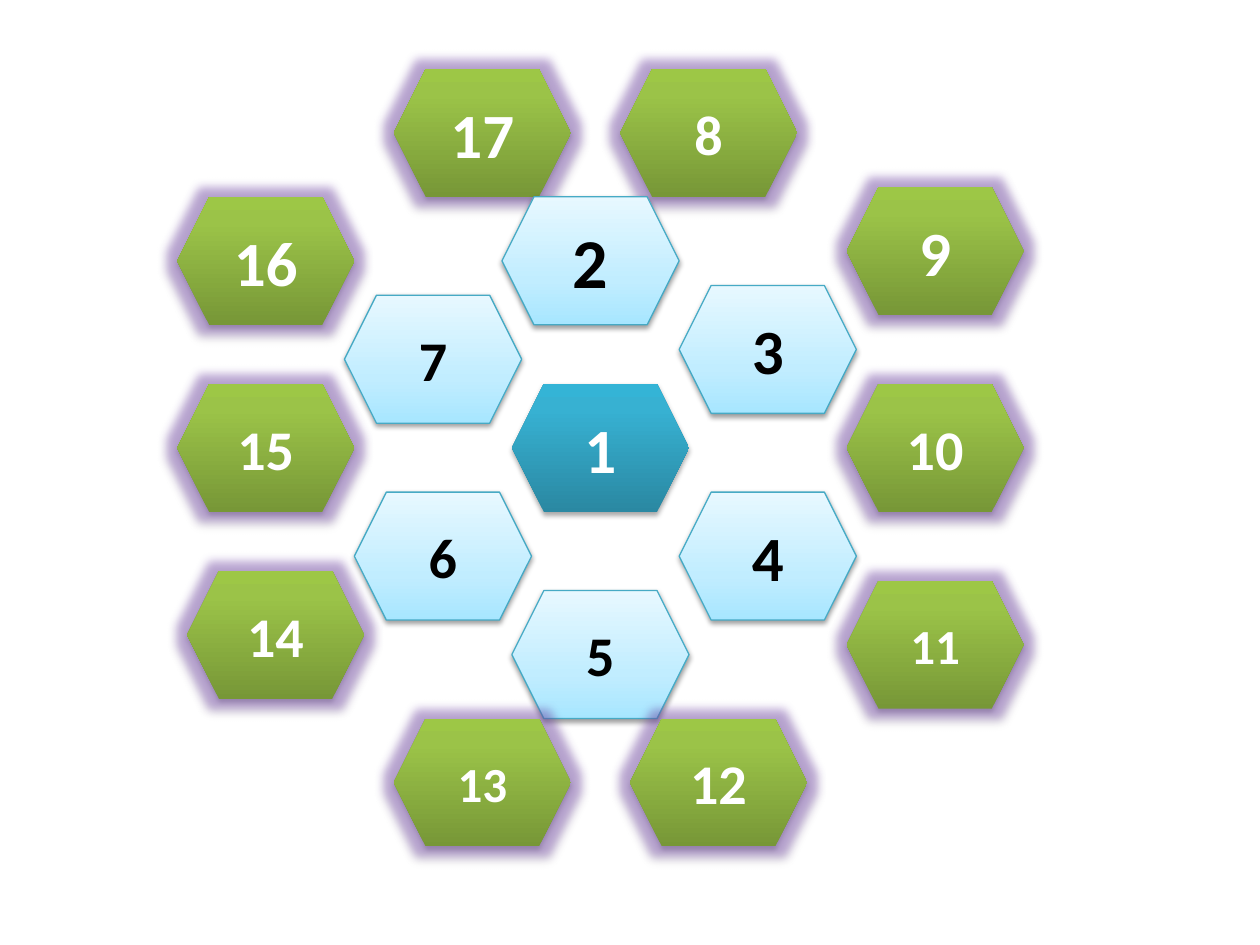
import pptx
import pptx.dml.color
import pptx.enum.shapes
import pptx.enum.text
import pptx.oxml
import pptx.oxml.ns
import pptx.util

COLOURS = {"white": "FFFFFF", "black": "000000", "edge": "46AAC5", "glow": "8064A2"}

# Gradient stops run from bottom to top: (percent, colour)
STYLES = {
    "centre": {"stops": [(0, "2A88A2"), (80, "37B1D2"), (100, "34B4D6")],
               "text": "white", "edge": None, "glow": False, "shadow": (35, 1.8)},
    "inner": {"stops": [(0, "A7E6FF"), (35, "C1EDFF"), (100, "E7F8FF")],
              "text": "black", "edge": "edge", "glow": False, "shadow": (38, 1.6)},
    "outer": {"stops": [(0, "779737"), (80, "9BC348"), (100, "9DC746")],
              "text": "white", "edge": None, "glow": True, "shadow": (35, 1.8)},
}

# Hexagons from back to front: number, style, column, row, text size
HEXAGONS = [
    ("16", "outer", 18, 20, 36),
    ("5", "inner", 52, 60, 32),
    ("1", "centre", 52, 39, 36),
    ("12", "outer", 64, 73, 32),
    ("8", "outer", 63, 7, 32),
    ("4", "inner", 69, 50, 36),
    ("3", "inner", 69, 29, 36),
    ("9", "outer", 86, 19, 36),
    ("10", "outer", 86, 39, 32),
    ("11", "outer", 86, 59, 28),
    ("14", "outer", 19, 58, 32),
    ("15", "outer", 18, 39, 32),
    ("17", "outer", 40, 7, 36),
    ("13", "outer", 40, 73, 28),
    ("7", "inner", 35, 30, 32),
    ("6", "inner", 36, 50, 32),
    ("2", "inner", 51, 20, 40),
]

GRID = 45 / 8  # points per grid step
HEXAGON_COLUMNS, HEXAGON_ROWS = 18, 13


def grid_length(steps):
    return pptx.util.Pt(steps * GRID)


def rgb(name):
    return pptx.dml.color.RGBColor.from_string(COLOURS[name])


def add_xml(parent, xml):
    namespace = pptx.oxml.ns.nsdecls("a")
    parent.append(pptx.oxml.parse_xml(xml.replace(" ", f" {namespace} ", 1)))


def write_text(shape, text, *, size, colour, font="Calibri", bold=True):
    frame = shape.text_frame
    frame.vertical_anchor = pptx.enum.text.MSO_ANCHOR.MIDDLE
    paragraph = frame.paragraphs[0]
    paragraph.alignment = pptx.enum.text.PP_ALIGN.CENTER
    run = paragraph.add_run()
    run.text = text
    run.font.name = font
    run.font.size = pptx.util.Pt(size)
    run.font.bold = bold
    run.font.color.rgb = rgb(colour)


def paint(shape, style):
    properties = shape._element.spPr
    # Gradient fill
    stops = "".join(f'<a:gs pos="{percent * 1000}"><a:srgbClr val="{colour}"/></a:gs>'
                    for percent, colour in style["stops"])
    add_xml(properties, f'<a:gradFill rotWithShape="1"><a:gsLst>{stops}</a:gsLst>'
                        '<a:lin ang="16200000" scaled="0"/></a:gradFill>')
    # Outline
    if style["edge"]:
        shape.line.color.rgb = rgb(style["edge"])
        shape.line.width = pptx.util.Pt(0.75)
    else:
        shape.line.fill.background()
    # Glow and shadow
    shape.shadow.inherit = False
    effects = properties.find(pptx.oxml.ns.qn("a:effectLst"))
    if style["glow"]:
        add_xml(effects, f'<a:glow rad="{pptx.util.Pt(11)}"><a:srgbClr val="{COLOURS["glow"]}">'
                         '<a:satMod val="175000"/><a:alpha val="40000"/></a:srgbClr></a:glow>')
    opacity, distance = style["shadow"]
    add_xml(effects, f'<a:outerShdw blurRad="{pptx.util.Pt(3.1)}" dist="{pptx.util.Pt(distance)}" '
                     f'dir="5400000" rotWithShape="0"><a:srgbClr val="{COLOURS["black"]}">'
                     f'<a:alpha val="{opacity * 1000}"/></a:srgbClr></a:outerShdw>')


def main():
    presentation = pptx.Presentation()
    presentation.slide_width = pptx.util.Pt(720)
    presentation.slide_height = pptx.util.Pt(540)
    slide = presentation.slides.add_slide(presentation.slide_layouts[6])

    for number, style_name, column, row, size in HEXAGONS:
        style = STYLES[style_name]
        hexagon = slide.shapes.add_shape(
            pptx.enum.shapes.MSO_SHAPE.HEXAGON,
            *map(grid_length, (column, row, HEXAGON_COLUMNS, HEXAGON_ROWS)))
        paint(hexagon, style)
        write_text(hexagon, number, size=size, colour=style["text"])

    presentation.save("out.pptx")


if __name__ == "__main__":
    main()
